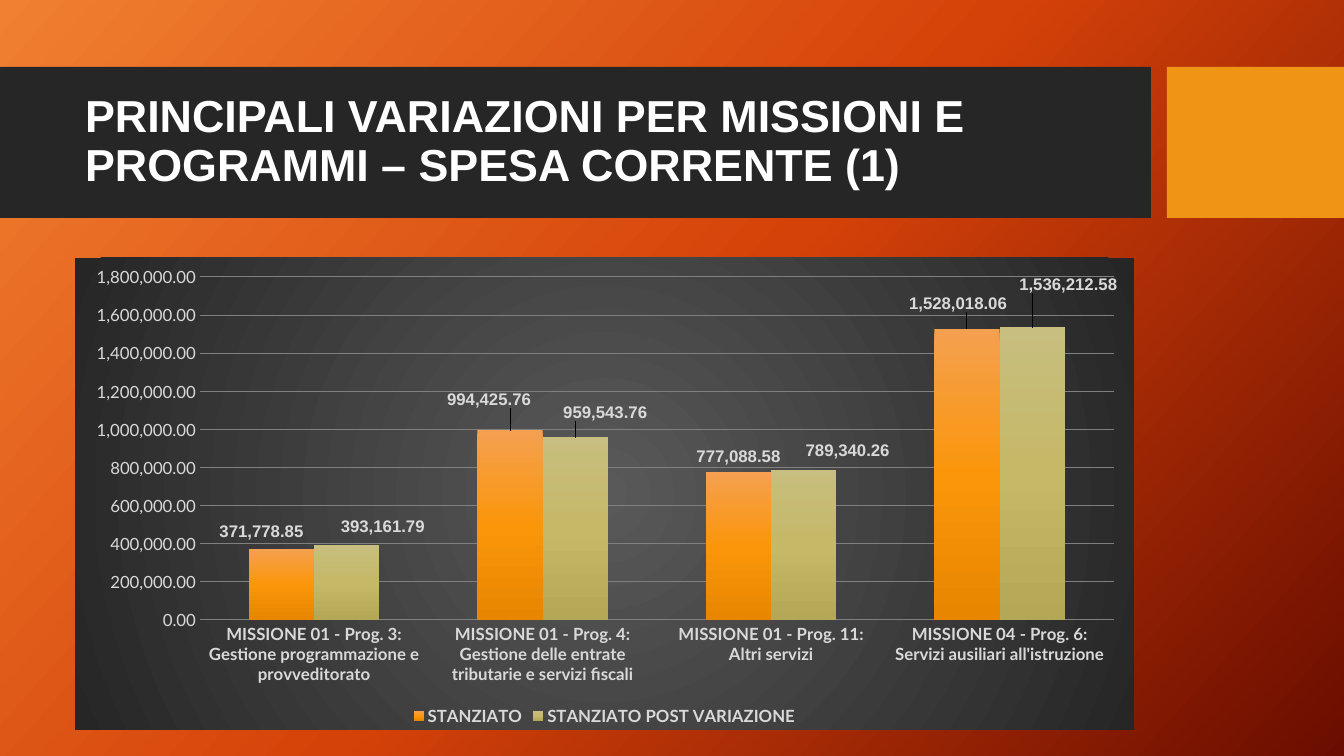
from pptx import Presentation
from pptx.chart.data import CategoryChartData
from pptx.dml.color import RGBColor
from pptx.enum.chart import XL_CHART_TYPE as ChartType, XL_LEGEND_POSITION as LegendPos
from pptx.enum.chart import XL_LABEL_POSITION as LabelPos, XL_TICK_MARK as TickMark
from pptx.enum.shapes import MSO_SHAPE as Preset
from pptx.enum.text import MSO_ANCHOR as Anchor, MSO_AUTO_SIZE as AutoSize, PP_ALIGN as Align
from pptx.oxml import parse_xml
from pptx.oxml.ns import nsdecls, qn
from pptx.util import Emu, Pt

WHITE = RGBColor(0xFF, 0xFF, 0xFF)
PALE = RGBColor(0xD9, 0xD9, 0xD9)
GRID = RGBColor(0x80, 0x80, 0x80)
CHARCOAL = RGBColor(0x26, 0x26, 0x26)
SLATE = RGBColor(0x59, 0x59, 0x59)
AMBER = RGBColor(0xF0, 0x94, 0x15)
SUNSET = [RGBColor(0xF1, 0x80, 0x31), RGBColor(0xD5, 0x42, 0x09), RGBColor(0x6A, 0x0D, 0x00)]
ORANGE = [RGBColor(0xF4, 0xA0, 0x50), RGBColor(0xFB, 0x96, 0x0A), RGBColor(0xE8, 0x86, 0x00)]
OLIVE = [RGBColor(0xC8, 0xBE, 0x7F), RGBColor(0xC5, 0xB8, 0x67), RGBColor(0xB4, 0xA7, 0x56)]

TITLE = "PRINCIPALI VARIAZIONI PER MISSIONI E PROGRAMMI – SPESA CORRENTE (1)"
PROGRAMMES = [
    "MISSIONE 01 - Prog. 3: Gestione programmazione e provveditorato",
    "MISSIONE 01 - Prog. 4: Gestione delle entrate tributarie e servizi fiscali",
    "MISSIONE 01 - Prog. 11: Altri servizi",
    "MISSIONE 04 - Prog. 6: Servizi ausiliari all'istruzione",
]
BUDGETS = [
    ("STANZIATO", ORANGE, [371778.85, 994425.76, 777088.58, 1528018.06],
     [(-20, -4), (-21, -18), (0, -2), (-9, -12)]),
    ("STANZIATO POST VARIAZIONE", OLIVE, [393161.79, 959543.76, 789340.26, 1536212.58],
     [(36, -5), (30, -12), (44, -6), (36, -30)]),
]
MONEY = "#,##0.00"

PX = 914400 / 100.8
SLIDE = (1344, 756)
BANDS = [((0, 67, 1151, 151), CHARCOAL), ((1167, 67, 177, 151), AMBER)]
TITLE_BOX = (75, 83, 1059, 119)
CHART_BOX = (75, 258, 1059, 472)
PLOT_BOX = (200, 277, 914, 343)


def px(*lengths):
    return [Emu(round(length * PX)) for length in lengths]


def style(font, size, color, bold=False, face="Lato"):
    font.size, font.bold, font.name = Pt(size), bold, face
    font.color.rgb = color


def write(frame, text, align=Align.LEFT, spacing=1.0, **look):
    paragraph = frame.paragraphs[0]
    paragraph.alignment, paragraph.line_spacing = align, spacing
    run = paragraph.add_run()
    run.text = text
    style(run.font, **look)


def gradient(colors, angle=None):
    step = 100000 // (len(colors) - 1)
    stops = "".join(f'<a:gs pos="{i * step}"><a:srgbClr val="{color}"/></a:gs>'
                    for i, color in enumerate(colors))
    centre = '<a:fillToRect l="50000" t="50000" r="50000" b="50000"/>'
    course = (f'<a:path path="circle">{centre}</a:path>' if angle is None
              else f'<a:lin ang="{angle * 60000}" scaled="0"/>')
    return parse_xml(f'<a:gradFill {nsdecls("a")} rotWithShape="1">'
                     f'<a:gsLst>{stops}</a:gsLst>{course}</a:gradFill>')


def paint(fill, owner, colors, angle):
    fill.gradient()
    plain = owner.find(".//" + qn("a:gradFill"))
    plain.getparent().replace(plain, gradient(colors, angle))


def layout(inner="", **fractions):
    places = "".join(f'<c:{key} val="{value:.4f}"/>' for key, value in fractions.items())
    return parse_xml(f'<c:layout {nsdecls("c")}><c:manualLayout>{inner}{places}'
                     '</c:manualLayout></c:layout>')


def add_bands(slide):
    for box, color in BANDS:
        band = slide.shapes.add_shape(Preset.RECTANGLE, *px(*box))
        band.shadow.inherit = False
        band.fill.solid()
        band.fill.fore_color.rgb = color
        band.line.fill.background()


def add_title(slide):
    title = slide.shapes.title
    title.left, title.top, title.width, title.height = px(*TITLE_BOX)
    frame = title.text_frame
    frame.auto_size, frame.word_wrap = AutoSize.NONE, True
    frame.vertical_anchor = Anchor.MIDDLE
    write(frame, TITLE, spacing=0.9, size=32, color=WHITE, bold=True, face="Arial")
    slide.shapes.element.append(title.element)


def place_plot(chart):
    left, top, width, height = CHART_BOX
    x, y, w, h = PLOT_BOX
    area = chart.element.find(".//" + qn("c:plotArea"))
    for automatic in area.findall(qn("c:layout")):
        area.remove(automatic)
    inner = ('<c:layoutTarget val="inner"/><c:xMode val="edge"/><c:yMode val="edge"/>')
    area.insert(0, layout(inner, x=(x - left) / width, y=(y - top) / height,
                          w=w / width, h=h / height))


def format_axes(chart):
    for axis, bold in ((chart.category_axis, True), (chart.value_axis, False)):
        axis.major_tick_mark = axis.minor_tick_mark = TickMark.NONE
        axis.format.line.fill.background()
        style(axis.tick_labels.font, 12, PALE, bold)
    amounts = chart.value_axis
    amounts.minimum_scale, amounts.maximum_scale, amounts.major_unit = 0, 1800000, 200000
    amounts.tick_labels.number_format = MONEY
    amounts.tick_labels.number_format_is_linked = False
    amounts.has_major_gridlines = True
    amounts.major_gridlines.format.line.color.rgb = GRID
    amounts.major_gridlines.format.line.width = Pt(0.75)


def format_bars(bars, colors, offsets):
    paint(bars.format.fill, bars.format.element if hasattr(bars.format, "element") else bars._element,
          colors, 90)
    bars.invert_if_negative = False
    for i, (dx, dy) in enumerate(offsets):
        label = bars.points[i].data_label
        style(label.font, 12, PALE, True, "Arial")
        label.position = LabelPos.OUTSIDE_END
    for mark, (dx, dy) in zip(bars._element.iter(qn("c:dLbl")), offsets):
        number = parse_xml(f'<c:numFmt {nsdecls("c")} formatCode="{MONEY}" sourceLinked="0"/>')
        mark.insert(1, layout(x=dx / CHART_BOX[2], y=dy / CHART_BOX[3]))
        mark.insert(2, number)


def add_budget_chart(slide):
    data = CategoryChartData(number_format=MONEY)
    data.categories = PROGRAMMES
    for name, _, amounts, _ in BUDGETS:
        data.add_series(name, amounts)
    chart = slide.shapes.add_chart(ChartType.COLUMN_CLUSTERED, *px(*CHART_BOX), data).chart
    style(chart.font, 10, WHITE)
    chart.has_title = False
    backdrop = parse_xml(f'<c:spPr {nsdecls("c", "a")}><a:ln><a:noFill/></a:ln></c:spPr>')
    backdrop.insert(0, gradient([SLATE, CHARCOAL]))
    chart.element.find(qn("c:chart")).addnext(backdrop)
    place_plot(chart)
    format_axes(chart)
    chart.has_legend = True
    chart.legend.position, chart.legend.include_in_layout = LegendPos.BOTTOM, False
    style(chart.legend.font, 12, PALE, True)
    plot = chart.plots[0]
    plot.gap_width, plot.overlap, plot.vary_by_categories = 150, 0, False
    for bars, (_, colors, _, offsets) in zip(plot.series, BUDGETS):
        format_bars(bars, colors, offsets)


def main():
    """Build the slide on the main budget changes by programme."""
    deck = Presentation()
    deck.slide_width, deck.slide_height = px(*SLIDE)
    slide = deck.slides.add_slide(deck.slide_layouts[5])
    paint(slide.background.fill, slide.element, SUNSET, 42)
    add_bands(slide)
    add_title(slide)
    add_budget_chart(slide)
    deck.save("out.pptx")


if __name__ == "__main__":
    main()
